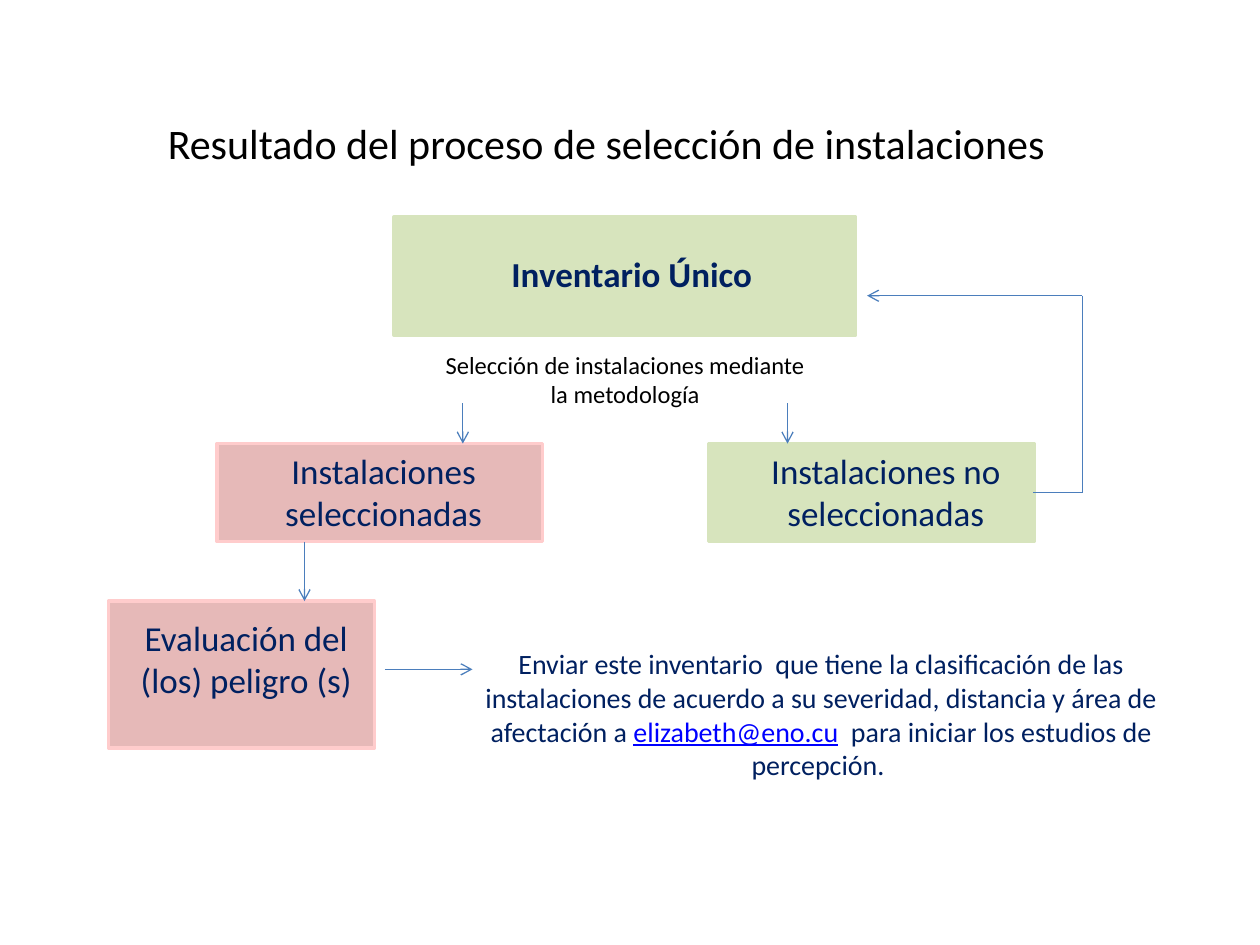
from collections import namedtuple
from dataclasses import dataclass
from itertools import pairwise

from lxml import etree
from pptx import Presentation
from pptx import util as u
from pptx.dml.color import RGBColor
from pptx.enum import shapes, text
from pptx.oxml import ns

Box = namedtuple("Box", "left top width height")


@dataclass(frozen=True)
class Theme:
    font: str = "Calibri"
    black: str = "000000"
    navy: str = "002060"
    link: str = "0000FF"
    arrow: str = "4B7EBC"
    green: tuple = ("D7E4BD", "D7E4BD")
    rose: tuple = ("E6B9B8", "FFCCCC")
    title_size: float = 24
    label_size: float = 20
    note_size: float = 16
    caption_size: float = 14
    border: float = 2
    stroke: float = 0.75


THEME = Theme()


def set_all(target, values):
    for name, value in values.items():
        setattr(target, name, value)


def points(values):
    return [u.Pt(value) for value in values]


def inside(box, left, top, width, height):
    return Box(box.left + left, box.top + top, width, height)


def write(frame, parts, size, anchor=text.MSO_ANCHOR.TOP):
    set_all(frame, {"word_wrap": True, "vertical_anchor": anchor,
                    "auto_size": text.MSO_AUTO_SIZE.NONE})
    para = frame.paragraphs[0]
    para.alignment = text.PP_ALIGN.CENTER
    for words, color, extra in parts:
        span = para.add_run()
        span.text = words
        set_all(span.font, {"name": THEME.font, "size": u.Pt(size), **extra})
        span.font.color.rgb = RGBColor.from_string(color)


def add_text(page, box, parts, size, **options):
    write(page.shapes.add_textbox(*points(box)).text_frame, parts, size, **options)


def add_card(page, box, colors, label_box, words, **extra):
    card = page.shapes.add_shape(shapes.MSO_SHAPE.RECTANGLE, *points(box))
    fill, line = map(RGBColor.from_string, colors)
    card.shadow.inherit = False
    card.fill.solid()
    card.fill.fore_color.rgb = fill
    card.line.color.rgb = line
    card.line.width = u.Pt(THEME.border)
    add_text(page, inside(box, *label_box), [(words, THEME.navy, extra)], THEME.label_size)


def add_line(page, start, end, arrow=True):
    line = page.shapes.add_connector(shapes.MSO_CONNECTOR.STRAIGHT, *points(start + end))
    line.line.color.rgb = RGBColor.from_string(THEME.arrow)
    line.line.width = u.Pt(THEME.stroke)
    if arrow:
        etree.SubElement(line.line._get_or_add_ln(), ns.qn("a:tailEnd"), type="arrow")
    etree.SubElement(line._element.spPr, ns.qn("a:effectLst"))


def place_title(page, box):
    title = page.shapes.title
    set_all(title, dict(zip(box._fields, points(box))))
    write(title.text_frame,
          [("Resultado del proceso de selección de instalaciones", THEME.black, {})],
          THEME.title_size, anchor=text.MSO_ANCHOR.MIDDLE)


def place_inventory(page, box):
    add_card(page, box, THEME.green, (29, 16.5, 214, 32), "Inventario Único", bold=True)
    add_text(page, inside(box, 17, 72.5, 230.5, 41),
             [("Selección de instalaciones mediante la metodología", THEME.black, {})],
             THEME.caption_size)


def place_branch(page, box, colors, label_left, words, arrow_x):
    add_card(page, box, colors, (label_left, 0, 157.5, 55.5), words)
    add_line(page, (box.left + arrow_x, box.top - 23), (box.left + arrow_x, box.top))


def place_feedback(page, box):
    right, bottom = box.left + box.width, box.top + box.height
    corners = [(right - 28, bottom), (right, bottom), (right, box.top), (box.left, box.top)]
    for start, end in pairwise(corners):
        add_line(page, start, end, arrow=end == corners[-1])


def place_evaluation(page, box):
    add_card(page, box, THEME.rose, (0, 5, 157.5, 55.5), "Evaluación del (los) peligro (s)")
    add_line(page, (box.left + 112, box.top - 34), (box.left + 112, box.top))
    middle = box.top + 39
    add_line(page, (box.left + 158, middle), (box.left + 208, middle))


def place_instruction(page, box):
    parts = [
        ("Enviar este inventario  que tiene la clasificación de las instalaciones "
         "de acuerdo a su severidad, distancia y área de afectación a ", THEME.navy, {}),
        ("elizabeth@eno.cu", THEME.link, {"underline": True}),
        ("  para iniciar los estudios de percepción. ", THEME.navy, {}),
    ]
    add_text(page, box, parts, THEME.note_size, anchor=text.MSO_ANCHOR.MIDDLE)


def main():
    deck = Presentation()
    set_all(deck, {"slide_width": u.Pt(720), "slide_height": u.Pt(540)})
    page = deck.slides.add_slide(deck.slide_layouts.get_by_name("Title Only"))
    place_title(page, Box(22.5, 39.5, 648, 84))
    place_inventory(page, Box(225, 124, 264, 67.5))
    place_branch(page, Box(124, 253.5, 186, 56), THEME.rose, 16.5,
                 "Instalaciones seleccionadas", 140.5)
    place_branch(page, Box(405, 253.5, 186, 56), THEME.green, 22.5,
                 "Instalaciones no seleccionadas", 45)
    place_feedback(page, Box(495.5, 169, 123, 112.5))
    place_evaluation(page, Box(62, 343.5, 152, 84))
    place_instruction(page, Box(264, 366, 410.5, 84))
    deck.save("out.pptx")


if __name__ == "__main__":
    main()
